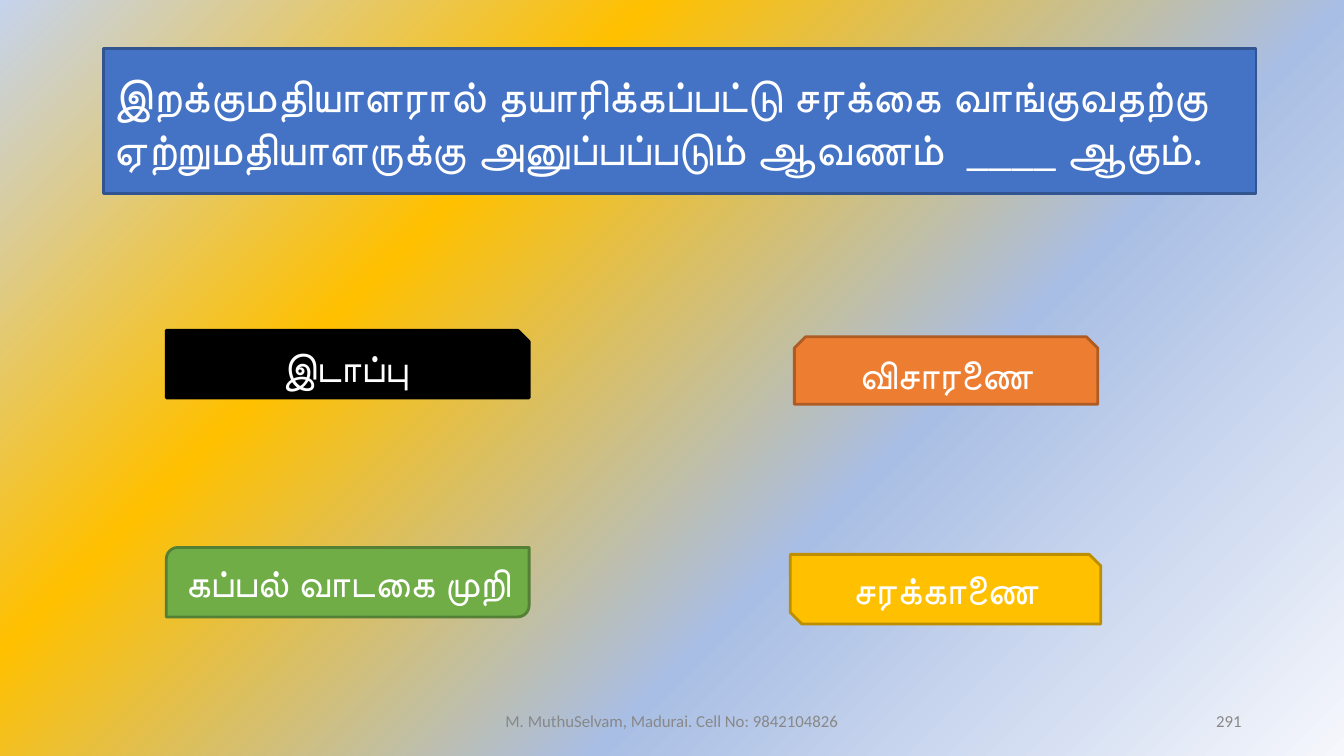
from pptx import Presentation
from pptx.dml.color import RGBColor
from pptx.enum.shapes import MSO_SHAPE as Kind
from pptx.enum.text import MSO_ANCHOR as Anchor, MSO_AUTO_SIZE as Auto, PP_ALIGN as Align
from pptx.oxml import parse_xml
from pptx.oxml.ns import nsdecls, qn
from pptx.util import Pt

QUERY = "இறக்குமதியாளரால் தயாரிக்கப்பட்டு சரக்கை வாங்குவதற்கு ஏற்றுமதியாளருக்கு அனுப்பப்படும் ஆவணம்  ____ ஆகும்."
SCROLL = (74.2, 34.6, 823, 103.7)
OPTIONS = [
    ("இடாப்பு", Kind.SNIP_1_RECTANGLE, (118.8, 236, 259.2, 48.2), "000000", "000000"),
    ("விசாரணை", Kind.SNIP_2_SAME_RECTANGLE, (567.4, 240.6, 216.7, 48.2), "ED7D31", "AF5C24"),
    ("சரக்காணை", Kind.SNIP_2_DIAG_RECTANGLE, (564.5, 396, 221.8, 49.7), "FFC000", "BD8E00"),
    ("கப்பல் வாடகை முறி", Kind.ROUND_2_DIAG_RECTANGLE, (118.8, 391, 259.2, 49.7), "70AD47", "538035"),
]
FOOT = [
    ("M. MuthuSelvam, Madurai. Cell No: 9842104826", (318, 500.5, 324, 28.75), Align.CENTER),
    ("291", (678, 500.5, 216, 28.75), Align.RIGHT),
]
STOPS = [(0, "F5F7FC"), (36, "A9BEE4"), (69, "FFC000"), (100, "C5D3ED")]


def color(code):
    return RGBColor.from_string(code)


def write(shape, text, size=28, tint="FFFFFF", align=Align.CENTER):
    frame = shape.text_frame
    frame.word_wrap = True
    frame.auto_size = Auto.NONE
    frame.vertical_anchor = Anchor.MIDDLE
    para = frame.paragraphs[0]
    para.alignment = align
    run = para.add_run()
    run.text = text
    run.font.name = "Calibri"
    run.font.size = Pt(size)
    run.font.color.rgb = color(tint)


def paint(shape, fill, edge):
    shape.fill.solid()
    shape.fill.fore_color.rgb = color(fill)
    shape.line.color.rgb = color(edge)
    shape.line.width = Pt(2)
    shape.shadow.inherit = False


def shade(slide):
    slide.background.fill.gradient()
    old = slide.element.find(".//" + qn("a:gradFill"))
    stops = "".join(
        f'<a:gs pos="{pos * 1000}"><a:srgbClr val="{code}"/></a:gs>' for pos, code in STOPS
    )
    new = parse_xml(
        f'<a:gradFill {nsdecls("a")} rotWithShape="1"><a:gsLst>{stops}</a:gsLst>'
        '<a:path path="circle"><a:fillToRect l="100000" t="100000"/></a:path>'
        '<a:tileRect r="-100000" b="-100000"/></a:gradFill>'
    )
    old.getparent().replace(old, new)


def main():
    deck = Presentation()
    deck.slide_width, deck.slide_height = Pt(960), Pt(540)
    slide = deck.slides.add_slide(deck.slide_layouts[5])
    shade(slide)

    title = slide.shapes.title
    title.left, title.top, title.width, title.height = map(Pt, SCROLL)
    title.element.spPr.append(
        parse_xml(f'<a:prstGeom {nsdecls("a")} prst="horizontalScroll"><a:avLst/></a:prstGeom>')
    )
    paint(title, "4472C4", "325491")
    write(title, QUERY, size=32, align=Align.LEFT)

    for text, kind, box, fill, edge in OPTIONS:
        shape = slide.shapes.add_shape(kind, *map(Pt, box))
        paint(shape, fill, edge)
        write(shape, text)

    for text, box, align in FOOT:
        write(slide.shapes.add_textbox(*map(Pt, box)), text, size=12, tint="888888", align=align)

    deck.save("out.pptx")


if __name__ == "__main__":
    main()
